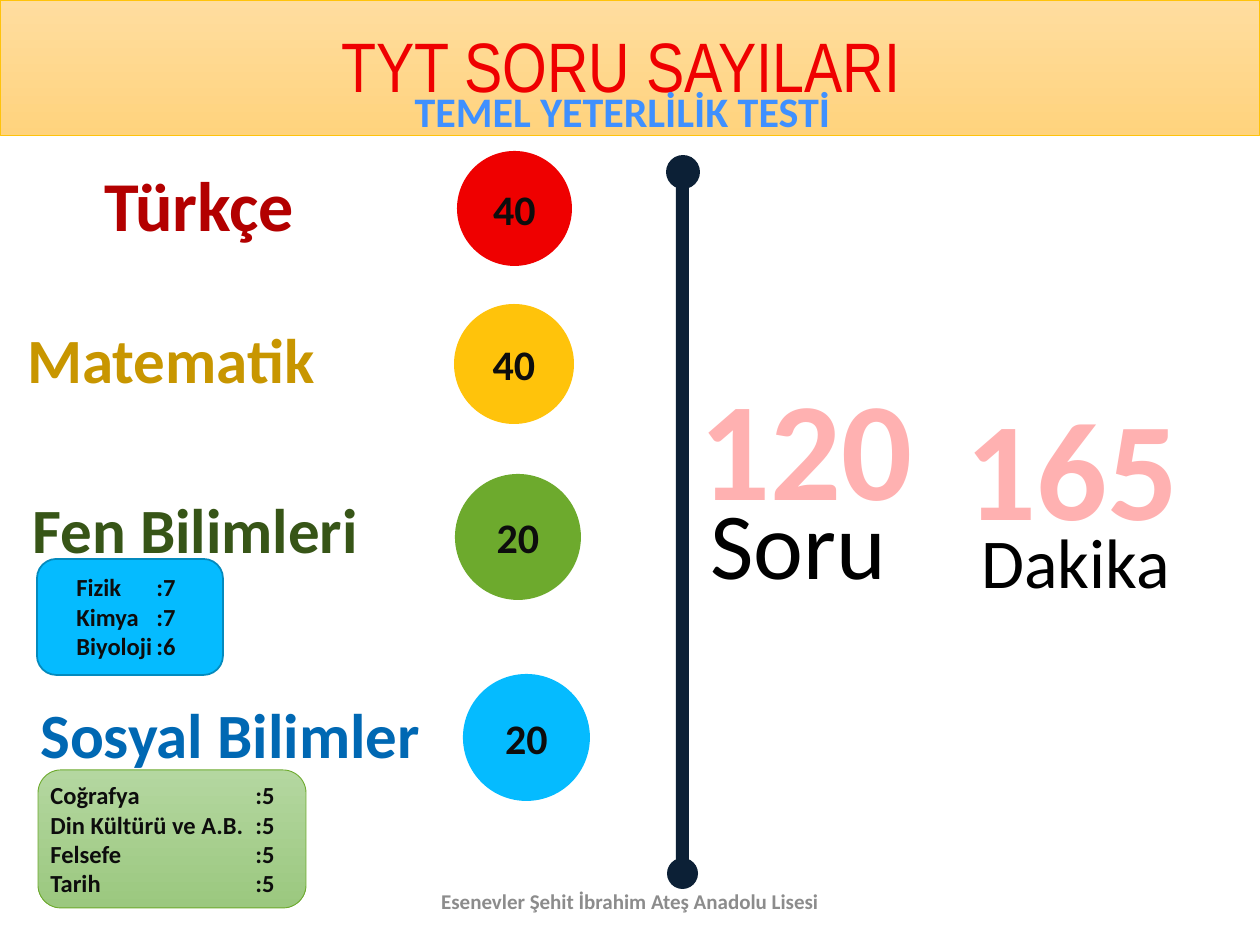
from lxml.etree import SubElement
from pptx import Presentation
from pptx.dml.color import RGBColor
from pptx.enum.shapes import MSO_SHAPE as Shape
from pptx.enum.text import MSO_ANCHOR as Anchor, PP_ALIGN as Align
from pptx.oxml.ns import qn
from pptx.util import Emu, Pt

EMU_PER_PX = 914400 / 126

COLORS = {
    "band_top": "FFDD9F", "band_bottom": "FFD37D", "yellow": "FFC30B",
    "red": "EF0000", "green": "6DAA2D", "blue": "05BBFF", "blue_edge": "048ABD",
    "panel_top": "B4D7A0", "panel_bottom": "9BC87F", "navy": "0C2036",
    "subtitle": "3F90FF", "turkish": "B30000", "maths": "C89600",
    "science": "375517", "social": "0068B3", "ink": "0D0D0D",
    "black": "000000", "total": "FFB1B1", "footer": "8C8C8C",
}

SUBJECTS = [
    ("Türkçe", (92, 155, 251, 97), 40, "turkish", "40", (457, 151, 115), "red"),
    ("Matematik", (15, 314, 326, 89), 36, "maths", "40", (454, 304, 120), "yellow"),
    ("Fen Bilimleri", (20, 484, 408, 89), 36, "science", "20", (455, 474, 126), "green"),
    ("Sosyal Bilimler", (28, 689, 436, 89), 36, "social", "20", (463, 674, 127), "blue"),
]
SCIENCE_PARTS = [("Fizik", 7), ("Kimya", 7), ("Biyoloji", 6)]
SOCIAL_PARTS = [("Coğrafya", 5), ("Din Kültürü ve A.B.", 5), ("Felsefe", 5), ("Tarih", 5)]
TOTALS = [
    ("120", (687, 354, 309, 183), "Soru", (698, 479, 212, 127), 54),
    ("165", (953, 374, 309, 185), "Dakika", (969, 512, 247, 100), 40),
]


def px(length):
    return Emu(round(length * EMU_PER_PX))


def rgb(name):
    return RGBColor.from_string(COLORS[name])


def write(frame, lines, size, color, bold=True, align=Align.LEFT,
          anchor=Anchor.TOP, face="Calibri"):
    frame.word_wrap = True
    frame.vertical_anchor = anchor
    frame.text = "\n".join(lines)
    for paragraph in frame.paragraphs:
        paragraph.alignment = align
        font = paragraph.font
        font.name, font.size, font.bold = face, Pt(size), bold
        font.color.rgb = rgb(color)


def add_label(slide, box, lines, size, color, **style):
    label = slide.shapes.add_textbox(*map(px, box))
    write(label.text_frame, lines, size, color, **style)
    return label


def add_block(slide, kind, box, fills, edge=None, edge_width=0.5):
    block = slide.shapes.add_shape(kind, *map(px, box))
    block.shadow.inherit = False
    if len(fills) == 1:
        block.fill.solid()
        block.fill.fore_color.rgb = rgb(fills[0])
    else:
        block.fill.gradient()
        block.fill.gradient_angle = 270
        for stop, name in zip(block.fill.gradient_stops, fills):
            stop.color.rgb = rgb(name)
    if edge:
        block.line.color.rgb = rgb(edge)
        block.line.width = Pt(edge_width)
    else:
        block.line.fill.background()
    return block


def add_subject(slide, name, box, size, color, count, circle, fill):
    left, top, diameter = circle
    badge = add_block(slide, Shape.OVAL, (left, top, diameter, diameter), [fill])
    write(badge.text_frame, [count], 24, "ink", align=Align.CENTER, anchor=Anchor.MIDDLE)
    add_label(slide, box, [name], size, color)


def add_breakdown(slide, box, parts, tab):
    lines = [f"{lesson}\t:{count}" for lesson, count in parts]
    label = add_label(slide, box, lines, 14, "ink")
    for paragraph in label.text_frame.paragraphs:
        properties = paragraph._p.get_or_add_pPr()
        tabs = SubElement(properties, qn("a:tabLst"))
        SubElement(tabs, qn("a:tab"), pos=str(px(tab)), algn="l")
        properties.insert(0, tabs)


def add_total(slide, number, number_box, unit, unit_box, unit_size):
    add_label(slide, number_box, [number], 80, "total")
    add_label(slide, unit_box, [unit], unit_size, "black", bold=False)


def add_divider(slide):
    add_block(slide, Shape.RECTANGLE, (676, 185, 13, 685), ["navy"])
    add_block(slide, Shape.OVAL, (666, 155, 34, 34), ["navy"])
    add_block(slide, Shape.OVAL, (667, 858, 31, 31), ["navy"])


def main():
    deck = Presentation()
    deck.slide_width, deck.slide_height = px(1260), px(945)
    slide = deck.slides.add_slide(deck.slide_layouts[6])

    add_block(slide, Shape.RECTANGLE, (0, 0, 1260, 136),
              ["band_top", "band_bottom"], "yellow")
    add_label(slide, (-9, 16, 1260, 149), ["TYT SORU SAYILARI"], 40, "red",
              bold=False, align=Align.CENTER, face="Arial Narrow")
    add_label(slide, (57, 79, 1131, 63), ["TEMEL YETERLİLİK TESTİ"], 24,
              "subtitle", align=Align.CENTER)

    add_divider(slide)
    for subject in SUBJECTS:
        add_subject(slide, *subject)

    add_block(slide, Shape.ROUNDED_RECTANGLE, (37, 559, 186, 116),
              ["blue"], "blue_edge", 1)
    add_breakdown(slide, (64, 566, 158, 102), SCIENCE_PARTS, 80)
    add_block(slide, Shape.ROUNDED_RECTANGLE, (38, 770, 268, 138),
              ["panel_top", "panel_bottom"], "green")
    add_breakdown(slide, (38, 774, 359, 131), SOCIAL_PARTS, 205)

    for total in TOTALS:
        add_total(slide, *total)
    add_label(slide, (417, 876, 426, 50),
              ["Esenevler Şehit İbrahim Ateş Anadolu Lisesi"], 12, "footer",
              align=Align.CENTER, anchor=Anchor.MIDDLE)
    deck.save("out.pptx")


if __name__ == "__main__":
    main()
